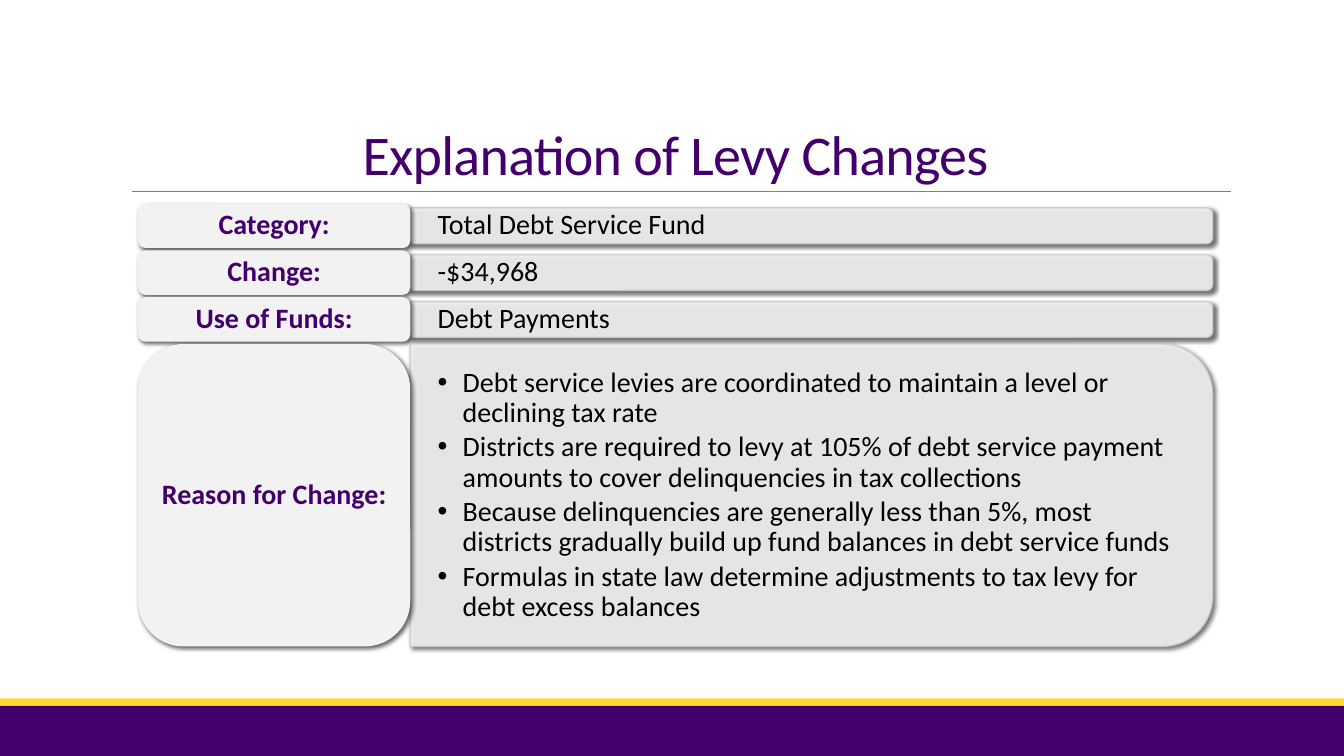
"""Build the levy change slide with its labelled rows."""
from dataclasses import dataclass

from lxml import etree
from pptx import Presentation
from pptx import util as u
from pptx.dml.color import RGBColor
from pptx.enum import shapes, text
from pptx.oxml import ns


@dataclass(frozen=True)
class Theme:
    purple: str = "43006C"
    gold: str = "FFD833"
    pale: str = "F2F2F2"
    edge: str = "CDCDD1"
    rule: str = "808080"
    black: str = "000000"
    font: str = "Calibri"
    head: float = 40
    body: float = 20


@dataclass(frozen=True)
class Box:
    left: float
    top: float
    width: float
    height: float

    def cm(self) -> tuple:
        return tuple(u.Cm(v) for v in (self.left, self.top, self.width, self.height))


@dataclass(frozen=True)
class Row:
    label: str
    lines: tuple
    height: float = 1.12
    inset: float = 0.11
    trim: float = 0


LOOK = Theme()
LEFT, TOP, GAP = 3.48, 5.13, 0.06
LABEL, BAR = 6.86, 20.22
SPLIT = LEFT + LABEL

ROWS = (
    Row("Category:", ("Total Debt Service Fund",)),
    Row("Change:", ("-$34,968",)),
    Row("Use of Funds:", ("Debt Payments",)),
    Row("Reason for Change:", (
        "Debt service levies are coordinated to maintain a level or declining tax rate",
        "Districts are required to levy at 105% of debt service payment amounts "
        "to cover delinquencies in tax collections",
        "Because delinquencies are generally less than 5%, most districts "
        "gradually build up fund balances in debt service funds",
        "Formulas in state law determine adjustments to tax levy for debt excess balances",
    ), 7.62, 0, 0.37),
)


def add(root, tag: str, **attrs):
    return etree.SubElement(root, ns.qn(tag), attrs)


def fade(fill) -> None:
    for color in fill.iter(ns.qn("a:srgbClr")):
        add(color, "a:alpha", val="90000")


def shade(shape) -> None:
    effect = shape._element.spPr.find(ns.qn("a:effectLst"))
    cast = add(effect, "a:outerShdw", blurRad="38100", dist="25400",
               dir="2700000", rotWithShape="0")
    add(add(cast, "a:srgbClr", val=LOOK.black), "a:alpha", val="60000")


def block(slide, kind, box: Box, color: str):
    shape = slide.shapes.add_shape(kind, *box.cm())
    shape.shadow.inherit = False
    shape.fill.solid()
    shape.fill.fore_color.rgb = RGBColor.from_string(color)
    shape.line.fill.background()
    return shape


def write(shape, lines: tuple, size: float, color: str, align, *, bold: bool = False,
          pitch: float = 0.9, after: float = 0, pads: tuple = (0, 0),
          anchor=text.MSO_ANCHOR.MIDDLE) -> None:
    frame = shape.text_frame
    frame.word_wrap = True
    frame.auto_size = text.MSO_AUTO_SIZE.NONE
    frame.vertical_anchor = anchor
    frame.margin_left = frame.margin_right = u.Cm(pads[0])
    frame.margin_top = frame.margin_bottom = u.Cm(pads[1])
    for i, line in enumerate(lines):
        para = frame.add_paragraph() if i else frame.paragraphs[0]
        para.alignment = align
        para.line_spacing = pitch
        para.space_before = u.Pt(0)
        para.space_after = u.Pt(after)
        run = para.add_run()
        run.text = line
        run.font.name = LOOK.font
        run.font.size = u.Pt(size)
        run.font.bold = bold
        run.font.color.rgb = RGBColor.from_string(color)


def place(shape, box: Box) -> None:
    shape.left, shape.top, shape.width, shape.height = box.cm()


def draw_bar(slide, box: Box) -> None:
    turned = Box(box.left + (box.width - box.height) / 2,
                 box.top + (box.height - box.width) / 2, box.height, box.width)
    bar = block(slide, shapes.MSO_SHAPE.ROUND_2_SAME_RECTANGLE, turned, LOOK.pale)
    bar.rotation = 90
    bar.line.color.rgb = RGBColor.from_string(LOOK.edge)
    bar.line.width = u.Pt(1)
    fade(bar._element.spPr)
    shade(bar)


def draw_row(slide, row: Row, top: float) -> None:
    box = Box(SPLIT, top + row.inset, BAR, row.height - 2 * row.inset)
    draw_bar(slide, box)
    inner = Box(SPLIT, box.top, BAR - row.trim, box.height)
    listed = len(row.lines) > 1
    if listed:
        note = slide.placeholders[1]
        slide.shapes._spTree.append(note._element)
        place(note, inner)
    else:
        note = slide.shapes.add_textbox(*inner.cm())
    write(note, row.lines, LOOK.body, LOOK.black, text.PP_ALIGN.LEFT,
          after=3, pads=(0.69, 0.36 if listed else 0))
    if listed:
        for para in note.text_frame.paragraphs:
            props = para._p.get_or_add_pPr()
            props.set("marL", str(u.Cm(0.63)))
            props.set("indent", str(-u.Cm(0.63)))
            add(props, "a:buChar", char="•")
    label = block(slide, shapes.MSO_SHAPE.ROUNDED_RECTANGLE,
                  Box(LEFT, top, LABEL, row.height), LOOK.pale)
    shade(label)
    write(label, (row.label,), LOOK.body, LOOK.purple, text.PP_ALIGN.CENTER, bold=True)


def draw_frame(slide) -> None:
    for top, height, color in ((17.78, 1.27, LOOK.purple), (17.6, 0.18, LOOK.gold)):
        block(slide, shapes.MSO_SHAPE.RECTANGLE, Box(0, top, 33.87, height), color)
    rule = slide.shapes.add_connector(shapes.MSO_CONNECTOR.STRAIGHT, u.Cm(3.33),
                                      u.Cm(4.83), u.Cm(31.01), u.Cm(4.83))
    rule.line.color.rgb = RGBColor.from_string(LOOK.rule)
    rule.line.width = u.Pt(0.5)
    add(rule._element.spPr, "a:effectLst")


def draw_title(slide) -> None:
    title = slide.shapes.title
    place(title, Box(3.05, 0.79, 27.94, 4.04))
    write(title, ("Explanation of Levy Changes",), LOOK.head, LOOK.purple,
          text.PP_ALIGN.CENTER, pitch=0.85, pads=(0.25, 0.13),
          anchor=text.MSO_ANCHOR.BOTTOM)
    title.text_frame.paragraphs[0].runs[0]._r.get_or_add_rPr().set("spc", "-50")


def main() -> None:
    deck = Presentation()
    deck.slide_width, deck.slide_height = u.Cm(33.87), u.Cm(19.05)
    slide = deck.slides.add_slide(deck.slide_layouts[1])
    draw_frame(slide)
    draw_title(slide)
    top = TOP
    for row in ROWS:
        draw_row(slide, row, top)
        top += row.height + GAP
    deck.save("out.pptx")


if __name__ == "__main__":
    main()
